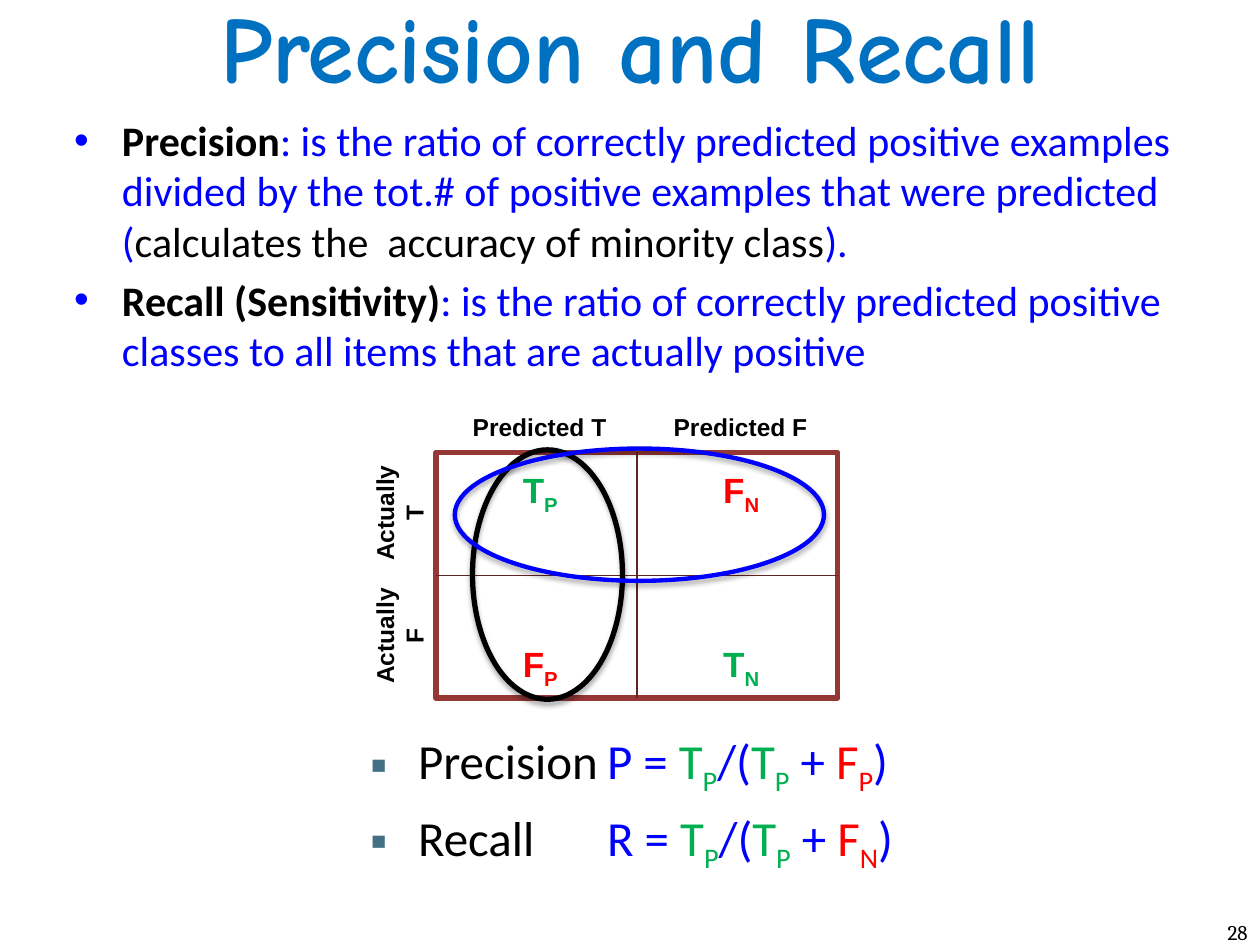
from lxml import etree
from pptx import Presentation
from pptx import util as u
from pptx.dml.color import RGBColor
from pptx.enum import shapes, text
from pptx.oxml import ns

COLORS = {
    "title": "0070C0", "black": "000000", "blue": "0000FF", "true": "00B050",
    "false": "FF0000", "bullet": "437085", "frame": "953735", "rule": "632523",
    "white": "FFFFFF",
}
Inches = u.Inches
CENTER = text.PP_ALIGN.CENTER


def rgb(name):
    return RGBColor.from_string(COLORS[name])


def add_xml(parent, tag, **attributes):
    return etree.SubElement(parent, ns.qn(tag), attributes)


def add_box(parent, left, top, width, height):
    box = parent.add_textbox(Inches(left), Inches(top), Inches(width), Inches(height))
    box.text_frame.word_wrap = True
    return box


def style(para, font, size, bold=None, align=None):
    para.font.name, para.font.size = font, u.Pt(size)
    para.font.bold = bold
    para.alignment = align


def add_spans(para, spans):
    """Each span is (text, colour) plus "bold" or "sub" where needed."""
    for words, color, *marks in spans:
        span = para.add_run()
        span.text = words
        span.font.color.rgb = rgb(color)
        if "bold" in marks:
            span.font.bold = True
        if "sub" in marks:
            span.font._element.set("baseline", "-25000")


def outcome(letter, sub):
    color = "true" if letter == "T" else "false"
    return [(letter, color), (sub, color, "sub")]


def add_label(parent, left, top, width, height, spans, font, size, bold=None, align=CENTER):
    box = add_box(parent, left, top, width, height)
    para = box.text_frame.paragraphs[0]
    style(para, font, size, bold, align)
    add_spans(para, spans)
    return box


def add_bullets(page, left, top, width, height, items, size, bullet, color, indent=0.38, tab=None):
    frame = add_box(page.shapes, left, top, width, height).text_frame
    for index, spans in enumerate(items):
        para = frame.add_paragraph() if index else frame.paragraphs[0]
        style(para, "Calibri", size)
        para.space_before = u.Pt(size * 0.2)
        add_spans(para, spans)
        props = para._p.get_or_add_pPr()
        props.set("marL", str(Inches(indent)))
        props.set("indent", str(-Inches(indent)))
        marks = [etree.Element(ns.qn("a:buClr")), etree.Element(ns.qn("a:buFont"), typeface="Arial"),
                 etree.Element(ns.qn("a:buChar"), char=bullet)]
        add_xml(marks[0], "a:srgbClr", val=COLORS[color])
        if tab:
            stops = etree.Element(ns.qn("a:tabLst"))
            add_xml(stops, "a:tab", pos=str(Inches(tab)), algn="l")
            marks.append(stops)
        defaults = props.find(ns.qn("a:defRPr"))
        for mark in marks:
            defaults.addprevious(mark)


def add_matrix(page, left, top, width, height):
    """Confusion matrix with its column and row headings."""
    parts = page.shapes.add_group_shape().shapes
    frame = parts.add_shape(shapes.MSO_SHAPE.RECTANGLE, Inches(left), Inches(top),
                            Inches(width), Inches(height))
    frame.shadow.inherit = False
    frame.fill.solid()
    frame.fill.fore_color.rgb = rgb("white")
    frame.line.color.rgb, frame.line.width = rgb("frame"), u.Pt(3)
    for start, end in ((0, 2), (1, 3)):
        rule = parts.add_connector(shapes.MSO_CONNECTOR.STRAIGHT, 0, 0, 0, 0)
        rule.begin_connect(frame, start)
        rule.end_connect(frame, end)
        rule.line.color.rgb, rule.line.width = rgb("rule"), u.Pt(0.75)
        add_xml(rule._element.spPr, "a:effectLst")

    centers_x = [left + width * part + 0.03 for part in (0.25, 0.75)]
    centers_y = [top + height * part for part in (0.25, 0.75)]
    for name, x, y in zip("TF", centers_x, centers_y):
        add_label(parts, x - 0.78, top - 0.37, 1.55, 0.34,
                  [(f"Predicted {name}", "black")], "Arial", 14, True)
        heading = add_label(parts, left - 0.79, y - 0.29, 1, 0.57,
                            [(f"Actually {name}", "black")], "Arial", 14, True)
        heading.rotation = 270
    for y, row in ((top + 0.08, ("TP", "FN")), (top + 1.46, ("FP", "TN"))):
        for x, (letter, sub) in zip(centers_x, row):
            add_label(parts, x - 0.39, y, 0.78, 0.44, outcome(letter, sub), "Arial", 20, True)


def add_ring(page, left, top, width, height, color, weight):
    ring = page.shapes.add_shape(shapes.MSO_SHAPE.OVAL, Inches(left), Inches(top),
                                 Inches(width), Inches(height))
    ring.fill.background()
    ring.line.color.rgb, ring.line.width = rgb(color), u.Pt(weight)
    effects = add_xml(ring._element.spPr, "a:effectLst")
    shadow = add_xml(effects, "a:outerShdw", blurRad=str(u.Pt(3.1)), dist=str(u.Pt(1.8)),
                     dir="5400000", rotWithShape="0")
    shade = add_xml(shadow, "a:srgbClr", val=COLORS["black"])
    add_xml(shade, "a:alpha", val="35000")


def formula(name, symbol, error):
    hit = outcome("T", "P")
    return [(name, "black"), (f"\t{symbol} = ", "blue"), *hit, ("/(", "blue"), *hit,
            (" + ", "blue"), *outcome(*error), (")", "blue")]


def main():
    deck = Presentation()
    deck.slide_width, deck.slide_height = Inches(10), Inches(7.5)
    page = deck.slides.add_slide(deck.slide_layouts[6])

    title = add_label(page.shapes, 0, 0, 10, 0.86, [("Precision and Recall", "title")],
                      "Comic Neue", 54, True)
    title.text_frame.vertical_anchor = text.MSO_ANCHOR.BOTTOM
    definitions = [
        [("Precision", "black", "bold"),
         (": is the ratio of correctly predicted positive examples divided by the tot.# "
          "of positive examples that were predicted (", "blue"),
         ("calculates the  accuracy of minority class", "black"), (").", "blue")],
        [("Recall (Sensitivity)", "black", "bold"),
         (": is the ratio of correctly predicted positive classes to all items that are "
          "actually positive", "blue")],
    ]
    add_bullets(page, 0.49, 0.86, 9, 2.2, definitions, 24, "•", "blue")
    formulas = [formula("Precision", "P", "FP"), formula("Recall", "R", "FN")]
    add_bullets(page, 2.84, 5.75, 5, 1.3, formulas, 28, "▪", "bullet", tab=1.88)
    add_label(page.shapes, 9.25, 7.25, 0.75, 0.25, [("28", "black")], "Cambria", 12,
              align=text.PP_ALIGN.RIGHT)
    add_matrix(page, 3.46, 3.59, 3.19, 1.95)
    add_ring(page, 3.75, 3.57, 1.19, 1.98, "black", 3)
    add_ring(page, 3.61, 3.56, 2.93, 1.05, "blue", 2.5)
    deck.save("out.pptx")


if __name__ == "__main__":
    main()
